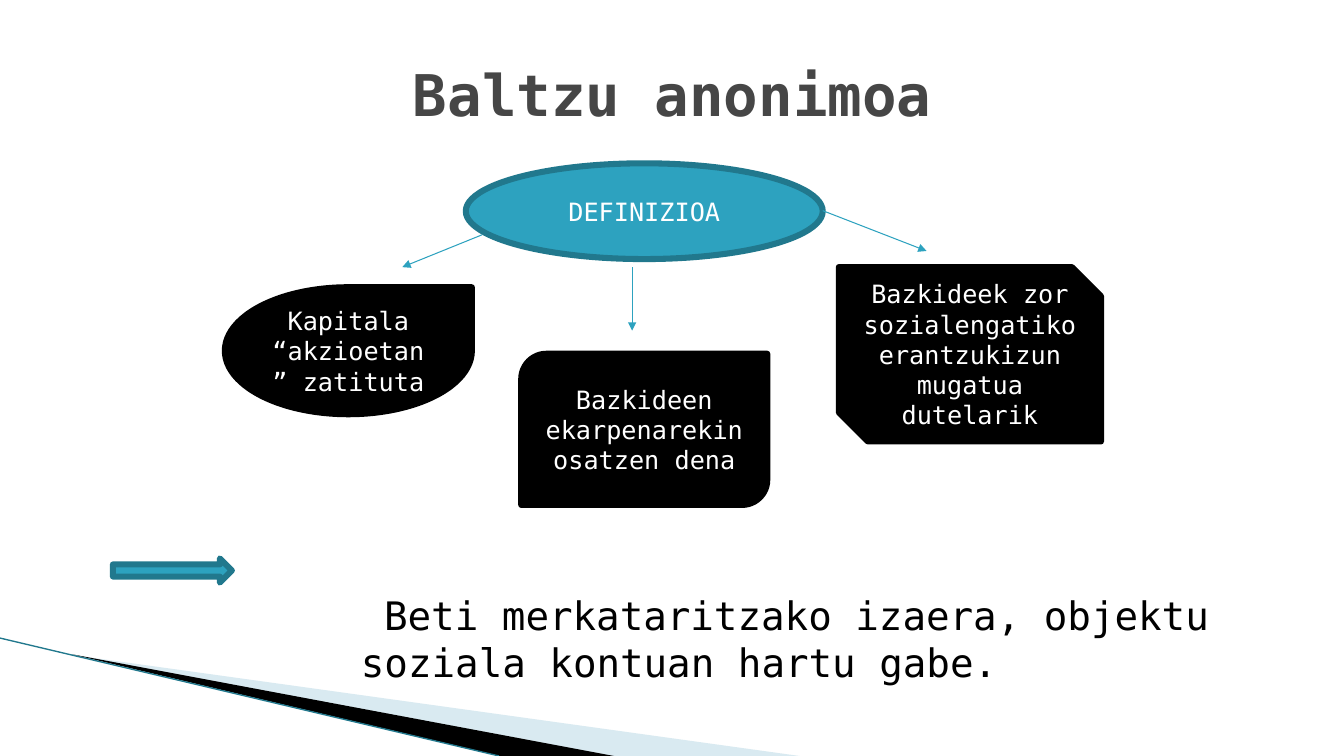
from lxml.etree import SubElement
from pptx import Presentation
from pptx.dml.color import RGBColor
from pptx.enum.shapes import MSO_CONNECTOR, MSO_SHAPE
from pptx.enum.text import MSO_ANCHOR, PP_ALIGN
from pptx.oxml.ns import qn
from pptx.util import Inches, Pt

FONT = "DejaVu Sans Mono"
BLACK = RGBColor(0x00, 0x00, 0x00)
WHITE = RGBColor(0xFF, 0xFF, 0xFF)
GRAY = RGBColor(0x46, 0x46, 0x46)
TEAL = RGBColor(0x2D, 0xA2, 0xBF)
DARK_TEAL = RGBColor(0x21, 0x78, 0x8D)
PALE_BLUE = RGBColor(0xA0, 0xCB, 0xDC)

# Content: lengths in inches
TITLE = "Baltzu anonimoa"
CONCLUSION = "Beti merkataritzako izaera, objektu soziala kontuan hartu gabe."
SHAPES = [  # kind, (left, top, width, height), fill, line, text
    (MSO_SHAPE.OVAL, (4.62, 1.62, 3.54, 0.95), TEAL, DARK_TEAL, "DEFINIZIOA"),
    (MSO_SHAPE.TEAR, (2.23, 2.85, 2.45, 1.26), BLACK, BLACK,
     "Kapitala “akzioetan” zatituta"),
    (MSO_SHAPE.ROUND_2_DIAG_RECTANGLE, (5.17, 3.51, 2.44, 1.5), BLACK, BLACK,
     "Bazkideen ekarpenarekin osatzen dena"),
    (MSO_SHAPE.SNIP_2_DIAG_RECTANGLE, (8.32, 2.65, 2.6, 1.73), BLACK, BLACK,
     "Bazkideek zor sozialengatiko erantzukizun mugatua dutelarik"),
    (MSO_SHAPE.RIGHT_ARROW, (1.12, 5.54, 1.18, 0.24), TEAL, DARK_TEAL, ""),
]
ARROWS = [  # start, end
    ((4.78, 2.33), (3.99, 2.65)),
    ((6.27, 2.65), (6.27, 3.28)),
    ((8.16, 2.09), (9.19, 2.49)),
]
WEDGES = [  # points, fill, opacity in percent
    ([(0.73, 6.5), (7.93, 7.5), (6.08, 7.5)], PALE_BLUE, 40),
    ([(0.71, 6.49), (6.09, 7.5), (4.96, 7.5)], BLACK, 100),
]
EDGE = ((0, 6.33), (4.95, 7.5))


def write_text(shape, text, size, color, bold=False, align=PP_ALIGN.CENTER,
               anchor=MSO_ANCHOR.MIDDLE):
    frame = shape.text_frame
    frame.word_wrap = True
    frame.vertical_anchor = anchor
    frame.text = text
    paragraph = frame.paragraphs[0]
    paragraph.alignment = align
    paragraph.space_before = Pt(0)
    font = paragraph.runs[0].font
    font.name, font.size, font.bold = FONT, Pt(size), bold
    font.color.rgb = color
    return paragraph


def place(shape, left, top, width, height):
    shape.left, shape.top = Inches(left), Inches(top)
    shape.width, shape.height = Inches(width), Inches(height)


def add_line(slide, start, end, color, width, arrowhead=False):
    points = [Inches(value) for value in start + end]
    connector = slide.shapes.add_connector(MSO_CONNECTOR.STRAIGHT, *points)
    connector.line.color.rgb = color
    connector.line.width = Pt(width)
    if arrowhead:
        SubElement(connector.line._get_or_add_ln(), qn("a:tailEnd"), type="triangle")
    SubElement(connector._element.spPr, qn("a:effectLst"))


presentation = Presentation()
presentation.slide_width = Inches(13.33)
presentation.slide_height = Inches(7.5)
slide = presentation.slides.add_slide(presentation.slide_layouts[1])

# Corner decoration
for points, color, opacity in WEDGES:
    corners = [(Inches(x), Inches(y)) for x, y in points]
    builder = slide.shapes.build_freeform(*corners[0], scale=1.0)
    builder.add_line_segments(corners[1:], close=True)
    wedge = builder.convert_to_shape()
    wedge.shadow.inherit = False
    wedge.fill.solid()
    wedge.fill.fore_color.rgb = color
    wedge.line.fill.background()
    if opacity < 100:
        fill_color = wedge._element.spPr.find(qn("a:solidFill"))[0]
        SubElement(fill_color, qn("a:alpha"), val=str(opacity * 1000))
add_line(slide, *EDGE, DARK_TEAL, 0.95)

# Title and conclusion
title = slide.shapes.title
place(title, 0.67, 0.3, 12, 1.25)
write_text(title, TITLE, 41, GRAY, bold=True)

body = slide.placeholders[1]
place(body, 3.58, 5.87, 8.8, 1.0)
frame = body.text_frame
frame.margin_left = frame.margin_right = frame.margin_top = frame.margin_bottom = 0
paragraph = write_text(body, CONCLUSION, 28, BLACK, align=PP_ALIGN.LEFT,
                       anchor=MSO_ANCHOR.TOP)
properties = paragraph._p.get_or_add_pPr()
properties.set("marL", "0")
properties.set("indent", str(Inches(0.23)))
SubElement(properties, qn("a:buNone"))

# Definition, its three parts and the block arrow
for kind, box, fill, line, text in SHAPES:
    shape = slide.shapes.add_shape(kind, *[Inches(value) for value in box])
    shape.shadow.inherit = False
    shape.fill.solid()
    shape.fill.fore_color.rgb = fill
    shape.line.color.rgb = line
    shape.line.width = Pt(4.33)
    if text:
        write_text(shape, text, 18, WHITE)

# Arrows from the definition to its parts
for start, end in ARROWS:
    add_line(slide, start, end, TEAL, 0.75, arrowhead=True)

presentation.save("out.pptx")
